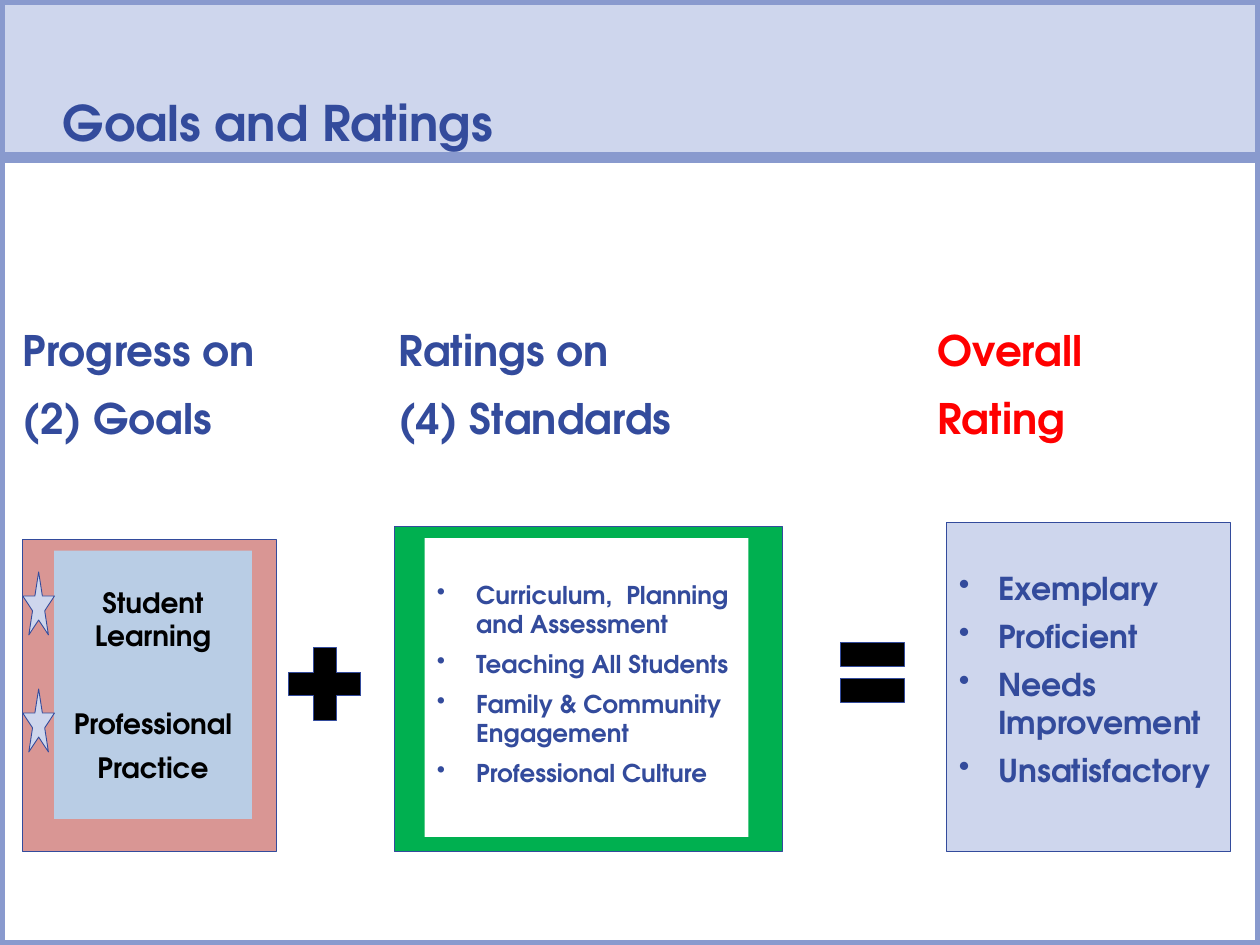
from dataclasses import dataclass

import lxml.etree
import pptx
import pptx.dml.color
import pptx.enum.shapes
import pptx.enum.text
import pptx.oxml.ns
import pptx.util
from pptx.util import Cm


@dataclass(frozen=True)
class Theme:
    font: str = "TeX Gyre Adventor"
    blue: str = "334B9C"
    frame: str = "899ACE"
    pale: str = "CED6ED"
    red: str = "FF0000"
    black: str = "000000"
    white: str = "FFFFFF"
    green: str = "00B050"
    pink: str = "D99694"
    sky: str = "B9CDE5"
    title: int = 28
    heading: int = 24
    ratings: int = 18
    goals: int = 16
    standards: int = 14


theme = Theme()
rgb = pptx.dml.color.RGBColor.from_string
kinds = pptx.enum.shapes.MSO_SHAPE
anchors = pptx.enum.text.MSO_ANCHOR
aligns = pptx.enum.text.PP_ALIGN

presentation = pptx.Presentation()
presentation.slide_width = Cm(25.4)
presentation.slide_height = Cm(19.05)
slide = presentation.slides.add_slide(presentation.slide_layouts[6])


def add_block(kind, box, fill=None, line=None, width=0.5):
    shape = slide.shapes.add_shape(kind, *[Cm(length) for length in box])
    shape.shadow.inherit = False
    if fill:
        shape.fill.solid()
        shape.fill.fore_color.rgb = rgb(fill)
    else:
        shape.fill.background()
    if line:
        shape.line.color.rgb = rgb(line)
        shape.line.width = pptx.util.Pt(width)
    else:
        shape.line.fill.background()
    return shape


def write(shape, lines, size, color, after=0, align=aligns.LEFT,
          anchor=anchors.MIDDLE, bullets=False):
    frame = shape.text_frame
    frame.word_wrap = True
    frame.vertical_anchor = anchor
    frame.text = "\n".join(lines)
    for paragraph in frame.paragraphs:
        paragraph.alignment = align
        paragraph.space_after = pptx.util.Pt(after)
        paragraph.font.name = theme.font
        paragraph.font.size = pptx.util.Pt(size)
        paragraph.font.bold = True
        paragraph.font.color.rgb = rgb(color)
        if bullets:
            properties = paragraph._p.get_or_add_pPr()
            properties.set("marL", str(Cm(0.79)))
            properties.set("indent", str(-Cm(0.79)))
            bullet = lxml.etree.Element(pptx.oxml.ns.qn("a:buChar"), char="•")
            properties.find(pptx.oxml.ns.qn("a:defRPr")).addprevious(bullet)
    return frame


# Page frame and title band
add_block(kinds.RECTANGLE, (0, 3.18, 25.4, 15.87), None, theme.frame, 6)
band = add_block(kinds.RECTANGLE, (0, 0, 25.4, 3.18), theme.pale, theme.frame, 6)
frame = write(band, ["Goals and Ratings"], theme.title, theme.blue,
              anchor=anchors.BOTTOM)
frame.margin_left = frame.margin_right = Cm(1.27)
frame.margin_top, frame.margin_bottom = 0, Cm(0.13)
frame.paragraphs[0].line_spacing = pptx.util.Pt(26)

# Column headings
for left, width, lines, color in (
    (0.46, 6.5, ["Progress on", "(2) Goals"], theme.blue),
    (8.04, 7.5, ["Ratings on", "(4) Standards"], theme.blue),
    (18.9, 5.5, ["Overall", "Rating"], theme.red),
):
    heading = slide.shapes.add_textbox(Cm(left), Cm(6.55), Cm(width), Cm(2.8))
    frame = write(heading, lines, theme.heading, color, 10, anchor=anchors.TOP)
    frame.margin_left = frame.margin_right = 0
    frame.margin_top = frame.margin_bottom = 0

# Operators between the columns
add_block(kinds.MATH_PLUS, (5.56, 12.8, 1.98, 1.98), theme.black, theme.blue)
add_block(kinds.MATH_EQUAL, (16.71, 12.52, 1.75, 2.06), theme.black, theme.blue)

# Standards
add_block(kinds.RECTANGLE, (7.95, 10.62, 7.82, 6.55), theme.green, theme.blue)
standards = add_block(kinds.RECTANGLE, (8.56, 10.85, 6.53, 6.02), theme.white)
frame = write(standards, [
    "Curriculum,  Planning and Assessment",
    "Teaching All Students",
    "Family & Community Engagement",
    "Professional Culture",
], theme.standards, theme.blue, 6, bullets=True)
frame.margin_bottom = Cm(0.28)

# Overall rating
ratings = add_block(kinds.RECTANGLE, (19.08, 10.54, 5.72, 6.63),
                    theme.pale, theme.blue)
frame = write(ratings, [
    "Exemplary", "Proficient", "Needs Improvement", "Unsatisfactory",
], theme.ratings, theme.blue, 6, bullets=True)
frame.margin_bottom = Cm(0.46)

# Goals, each marked by a star
add_block(kinds.RECTANGLE, (0.46, 10.87, 5.11, 6.3), theme.pink, theme.blue)
goals = add_block(kinds.RECTANGLE, (1.09, 11.1, 3.99, 5.41), theme.sky)
frame = write(goals, ["Student Learning", "Professional", "Practice"],
              theme.goals, theme.black, 6, aligns.CENTER)
frame.paragraphs[0].space_after = pptx.util.Pt(31)
for top in (11.53, 13.89):
    add_block(kinds.STAR_5_POINT, (0.46, top, 0.64, 1.27), theme.pale, theme.blue)

presentation.save("out.pptx")
